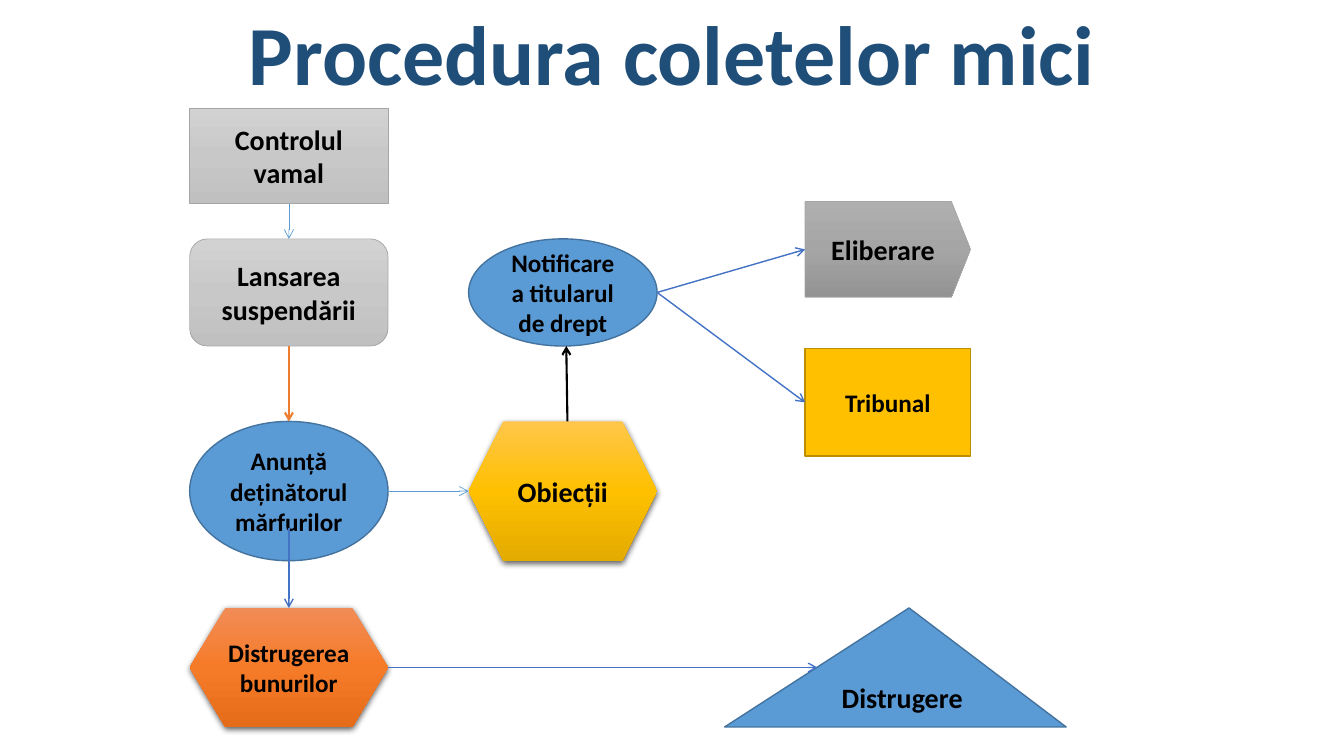
from copy import deepcopy

from lxml import etree
from pptx import Presentation
from pptx.dml.color import RGBColor
from pptx.enum.shapes import MSO_CONNECTOR, MSO_SHAPE
from pptx.enum.text import MSO_ANCHOR, PP_ALIGN
from pptx.oxml.ns import qn
from pptx.util import Cm, Pt

RECTANGLE = MSO_SHAPE.RECTANGLE
ROUNDED = MSO_SHAPE.ROUNDED_RECTANGLE
OVAL = MSO_SHAPE.OVAL
HEXAGON = MSO_SHAPE.HEXAGON
TRIANGLE = MSO_SHAPE.ISOSCELES_TRIANGLE
PENTAGON = MSO_SHAPE.PENTAGON
STRAIGHT = MSO_CONNECTOR.STRAIGHT
MIDDLE, BOTTOM = MSO_ANCHOR.MIDDLE, MSO_ANCHOR.BOTTOM
CENTER = PP_ALIGN.CENTER
SITE_TOP, SITE_LEFT, SITE_BOTTOM = 0, 1, 2

COLORS = {
    "title": "1F4E79", "text": "000000",
    "blue": "5B9BD5", "blue edge": "43739E", "indigo": "4472C4",
    "orange": "ED7D31", "gold": "FFC000", "gold edge": "BD8E00", "gray": "A5A5A5",
}
GRADIENTS = {
    "light gray": ("D2D2D2", "C8C8C8", "C0C0C0"),
    "dark gray": ("AFAFAF", "A5A5A5", "939393"),
    "orange shade": ("F18C57", "F67B28", "E56C19"),
    "gold shade": ("FFC64B", "FFC000", "E3AB00"),
}

# Column lefts and widths, row tops and heights, in centimetres
LEFT_X, LEFT_W = 4.78, 5
MIDDLE_X, MIDDLE_W = 11.81, 4.75
RIGHT_X, RIGHT_W = 20.29, 4.17
CONTROL_Y, SUSPEND_Y, NOTICE_Y, DESTROY_Y = 2.72, 6.02, 10.62, 15.32
LOW_H, BOX_H, TALL_H, DESTROY_H = 2.41, 2.7, 3.51, 3

# key: preset, left, top, width, height, fill, (edge, points), text, size, adjustment
STEPS = {
    "control": (RECTANGLE, LEFT_X, CONTROL_Y, LEFT_W, LOW_H, "light gray",
                ("gray", 0.5), "Controlul vamal", 20, None),
    "suspension": (ROUNDED, LEFT_X, SUSPEND_Y, LEFT_W, BOX_H, "light gray",
                   ("gray", 0.5), "Lansarea suspendării", 20, None),
    "holder": (OVAL, LEFT_X, NOTICE_Y, LEFT_W, TALL_H, "blue",
               ("blue edge", 1), "Anunță deținătorul mărfurilor", 18, None),
    "notice": (OVAL, MIDDLE_X, SUSPEND_Y, MIDDLE_W, BOX_H, "blue",
               ("blue edge", 1), "Notificarea titularul de drept", 18, None),
    "goods": (HEXAGON, LEFT_X, DESTROY_Y, LEFT_W, DESTROY_H, "orange shade",
              None, "Distrugerea bunurilor", 18, 0.3),
    "destruction": (TRIANGLE, 18.26, DESTROY_Y, 8.61, DESTROY_H, "blue",
                    ("blue edge", 1), "Distrugere", 20, 0.54),
    "objections": (HEXAGON, MIDDLE_X, NOTICE_Y, MIDDLE_W, TALL_H, "gold shade",
                   None, "Obiecții", 20, 0.25),
    "court": (RECTANGLE, RIGHT_X, 8.79, RIGHT_W, BOX_H, "gold",
              ("gold edge", 1), "Tribunal", 18, None),
    "release": (PENTAGON, RIGHT_X, 5.08, RIGHT_W, LOW_H, "dark gray",
                ("gray", 0.5), "Eliberare", 20, 0.2),
}

LEFT_MID = LEFT_X + LEFT_W / 2
LEFT_EDGE = LEFT_X + LEFT_W
NOTICE_MID = SUSPEND_Y + BOX_H / 2
HOLDER_MID = NOTICE_Y + TALL_H / 2
DESTROY_MID = DESTROY_Y + DESTROY_H / 2
NOTICE_OUT = (MIDDLE_X + MIDDLE_W, NOTICE_MID)

# start, end, colour, points; an end is a point or a (step, connection site) pair
ARROWS = [
    (("control", SITE_BOTTOM), ("suspension", SITE_TOP), "blue", 0.5),
    (("suspension", SITE_BOTTOM), (LEFT_MID, NOTICE_Y), "orange", 1.5),
    ((LEFT_MID, 13.31), (LEFT_MID, DESTROY_Y), "indigo", 1),
    ((LEFT_EDGE, DESTROY_MID), (20.6, DESTROY_MID), "indigo", 1),
    (NOTICE_OUT, ("court", SITE_LEFT), "indigo", 1),
    ((LEFT_EDGE, HOLDER_MID), (MIDDLE_X, HOLDER_MID), "blue", 0.5),
    ((14.3, NOTICE_Y), (14.27, SUSPEND_Y + BOX_H), "text", 1.5),
    (NOTICE_OUT, ("release", SITE_LEFT), "indigo", 1),
]


def write_text(shape, text, size, color, anchor):
    frame = shape.text_frame
    frame.word_wrap = True
    frame.vertical_anchor = anchor
    paragraph = frame.paragraphs[0]
    paragraph.alignment = CENTER
    run = paragraph.add_run()
    run.text = text
    run.font.name = "Calibri"
    run.font.size = Pt(size)
    run.font.bold = True
    run.font.color.rgb = RGBColor.from_string(COLORS[color])
    return paragraph


def fill_gradient(fill, stops):
    """Fill from top to bottom with evenly spaced colour stops."""
    fill.gradient()
    fill.gradient_angle = 270
    stop_list = fill._xPr.find(qn("a:gradFill")).find(qn("a:gsLst"))
    stop_list.insert(1, deepcopy(stop_list[0]))
    for index, (stop, color) in enumerate(zip(fill.gradient_stops, stops)):
        stop.position = index / (len(stops) - 1)
        stop.color.rgb = RGBColor.from_string(color)


presentation = Presentation()
presentation.slide_width = Cm(33.87)
presentation.slide_height = Cm(19.05)
slide = presentation.slides.add_slide(presentation.slide_layouts[6])

steps = {}
for key, (preset, left, top, width, height, fill, edge, text, size, adjustment) in STEPS.items():
    shape = slide.shapes.add_shape(preset, Cm(left), Cm(top), Cm(width), Cm(height))
    shape.shadow.inherit = False
    if adjustment is not None:
        shape.adjustments[0] = adjustment
    if fill in GRADIENTS:
        fill_gradient(shape.fill, GRADIENTS[fill])
    else:
        shape.fill.solid()
        shape.fill.fore_color.rgb = RGBColor.from_string(COLORS[fill])
    if edge:
        shape.line.color.rgb = RGBColor.from_string(COLORS[edge[0]])
        shape.line.width = Pt(edge[1])
    else:
        shape.line.fill.background()
    if preset == HEXAGON:
        effects = shape._element.spPr.find(qn("a:effectLst"))
        shadow = etree.SubElement(effects, qn("a:outerShdw"), blurRad=str(Pt(4.5)),
                                  dist=str(Pt(1.5)), dir="5400000", rotWithShape="0")
        shade = etree.SubElement(shadow, qn("a:srgbClr"), val=COLORS["text"])
        etree.SubElement(shade, qn("a:alpha"), val="63000")
    write_text(shape, text, size, "text", MIDDLE)
    steps[key] = shape

for start, end, color, points in ARROWS:
    arrow = slide.shapes.add_connector(STRAIGHT, 0, 0, 0, 0)
    if start[0] in steps:
        arrow.begin_connect(steps[start[0]], start[1])
    else:
        arrow.begin_x, arrow.begin_y = Cm(start[0]), Cm(start[1])
    if end[0] in steps:
        arrow.end_connect(steps[end[0]], end[1])
    else:
        arrow.end_x, arrow.end_y = Cm(end[0]), Cm(end[1])
    arrow.line.color.rgb = RGBColor.from_string(COLORS[color])
    arrow.line.width = Pt(points)
    etree.SubElement(arrow.line._get_or_add_ln(), qn("a:tailEnd"), type="arrow")
    etree.SubElement(arrow._element.spPr, qn("a:effectLst"))

title = slide.shapes.add_textbox(0, Cm(0.53), presentation.slide_width, Cm(2.21))
heading = write_text(title, "Procedura coletelor mici", 60, "title", BOTTOM)
heading.line_spacing = 0.9

presentation.save("out.pptx")
